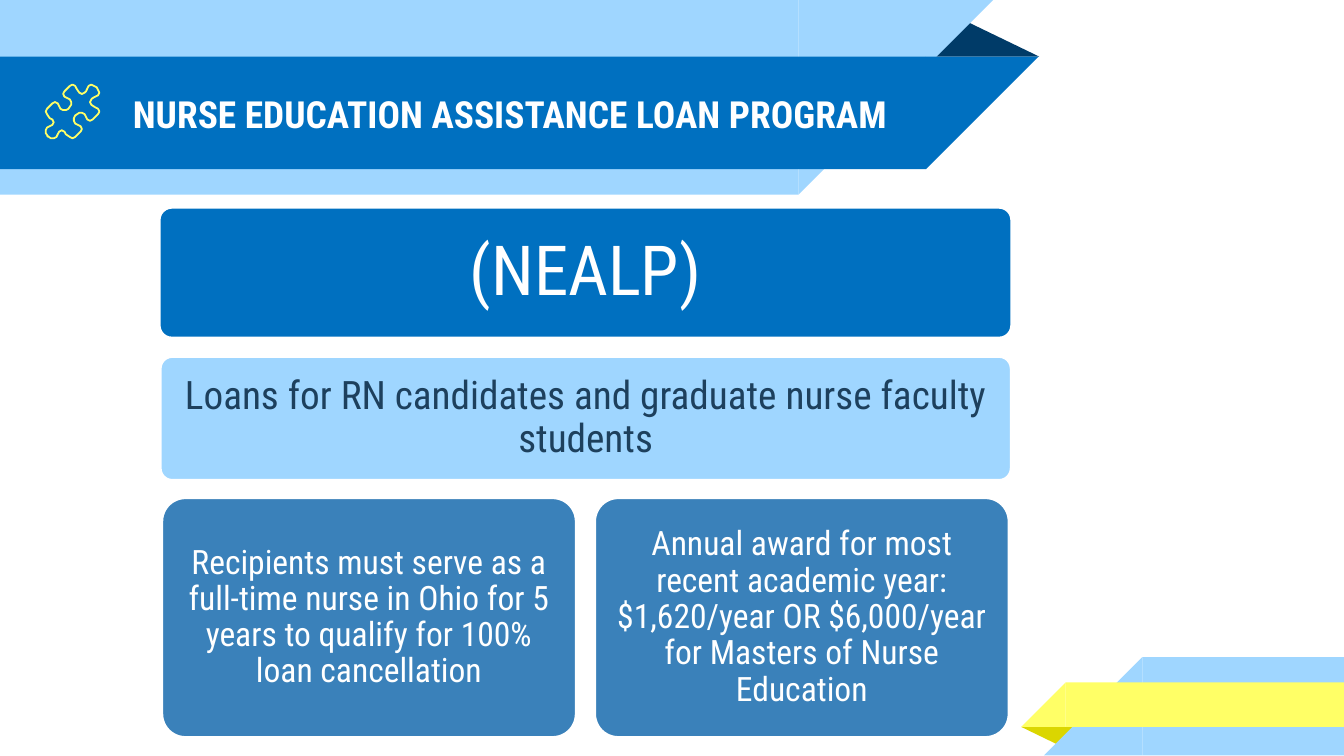
from pptx import Presentation
from pptx.dml.color import RGBColor
from pptx.enum.shapes import MSO_SHAPE as Preset
from pptx.enum.text import MSO_ANCHOR as Anchor, MSO_AUTO_SIZE as AutoSize, PP_ALIGN as Align
from pptx.util import Cm, Pt

FONT = "Roboto Condensed"
WHITE, BLUE, SKY, STEEL = "FFFFFF", "0070C0", "9FD6FF", "3A81BA"
NAVY, INK, YELLOW, OLIVE = "003B68", "1D405D", "FFFF66", "DBD600"
SLIDE_W, SLIDE_H = 25.4, 14.29

# Upper left half of the puzzle piece, in hundredths of an inch
PUZZLE_HALF = [
    (72, 65), (70, 64), (68, 63), (66, 64), (65, 66), (64, 68), (63, 69),
    (61, 70), (59, 69), (57, 66), (56, 64), (54, 63), (52, 64), (50, 66),
    (48, 68), (47, 70), (48, 72), (50, 73), (52, 74), (53, 76), (53, 78),
    (51, 81), (49, 82), (47, 82), (45, 81), (44, 79), (43, 77), (41, 76),
    (39, 77), (37, 79), (35, 81), (34, 83), (35, 85), (37, 88), (39, 89),
    (40, 91), (39, 93), (37, 94), (35, 95), (34, 97), (34, 99), (36, 102),
]
MIRROR_SUM = 137  # the piece is symmetric about the line x + y = 137


def color(hex_code):
    return RGBColor.from_string(hex_code)


def add_block(slide, preset, left, top, width, height, fill, rotation=0):
    block = slide.shapes.add_shape(preset, Cm(left), Cm(top), Cm(width), Cm(height))
    block.shadow.inherit = False
    block.fill.solid()
    block.fill.fore_color.rgb = color(fill)
    block.line.fill.background()
    block.rotation = rotation
    return block


def add_fold(slide, left, top, width, height, fill, rotation=0):
    fold = add_block(slide, Preset.ISOSCELES_TRIANGLE, left, top, width, height, fill, rotation)
    fold.adjustments[0] = 0.32


def add_header_band(slide, top, width, height, fill):
    """Band from the left edge, with a slanted right end."""
    add_block(slide, Preset.RECTANGLE, 0, top, width, height, fill)
    add_block(slide, Preset.RIGHT_TRIANGLE, width, top, height, height, fill, 90)


def add_footer_band(slide, left, top, height, fill):
    """Band to the right edge, with a slanted left end."""
    add_block(slide, Preset.RECTANGLE, left, top, SLIDE_W - left, height, fill)
    add_block(slide, Preset.RIGHT_TRIANGLE, left - height, top, height, height, fill, 270)


def format_text(frame, text, size, text_color, inset, align, bold=False):
    frame.text = text
    frame.word_wrap = True
    frame.auto_size = AutoSize.NONE
    frame.vertical_anchor = Anchor.MIDDLE
    frame.margin_left = frame.margin_right = Cm(inset)
    frame.margin_top = frame.margin_bottom = Cm(inset)
    paragraph = frame.paragraphs[0]
    paragraph.alignment = align
    font = paragraph.runs[0].font
    font.name, font.size, font.bold = FONT, Pt(size), bold
    font.color.rgb = color(text_color)
    return paragraph


def add_card(slide, box, fill, text, size, text_color, inset):
    card = add_block(slide, Preset.ROUNDED_RECTANGLE, *box, fill)
    card.adjustments[0] = 0.1
    card.line.color.rgb = color(WHITE)
    card.line.width = Pt(2)
    paragraph = format_text(card.text_frame, text, size, text_color, inset, Align.CENTER)
    paragraph.line_spacing = 0.9


def add_puzzle_piece(slide):
    mirrored = [(MIRROR_SUM - y, MIRROR_SUM - x) for x, y in reversed(PUZZLE_HALF)]
    start, *rest = PUZZLE_HALF + mirrored
    outline = slide.shapes.build_freeform(*start, scale=Cm(2.54) / 100)
    outline.add_line_segments(rest, close=True)
    piece = outline.convert_to_shape()
    piece.shadow.inherit = False
    piece.fill.background()
    piece.line.color.rgb = color(YELLOW)
    piece.line.width = Pt(0.96)


def add_title(slide, text):
    title = slide.shapes.title
    title.left, title.top, title.width, title.height = Cm(2.26), Cm(1.09), Cm(15.65), Cm(2.13)
    format_text(title.text_frame, text, 20, WHITE, 0.25, Align.LEFT, bold=True)
    # Bring the title in front of the ribbon
    slide.shapes.element.append(title.element)


def main():
    deck = Presentation()
    deck.slide_width, deck.slide_height = Cm(SLIDE_W), Cm(SLIDE_H)
    slide = deck.slides.add_slide(deck.slide_layouts[5])

    # Header ribbon
    add_fold(slide, 17.48, 0.36, 2.16, 0.71, NAVY)
    add_header_band(slide, 0, 15.09, 3.68, SKY)
    add_header_band(slide, 1.07, 17.5, 2.13, BLUE)

    # Footer ribbon
    add_fold(slide, 19.3, 13.74, 1.09, 0.36, OLIVE, 180)
    add_footer_band(slide, 21.59, 12.42, 1.86, SKY)
    add_footer_band(slide, 20.14, 12.9, 0.84, YELLOW)

    # Program, purpose and terms
    add_card(slide, (3, 3.91, 16.13, 2.49), BLUE, "(NEALP)", 37, WHITE, 0.38)
    add_card(slide, (3.02, 6.73, 16.1, 2.36), SKY,
             "Loans for RN candidates and graduate nurse faculty students", 21, INK, 0.23)
    terms = [
        "Recipients must serve as a full-time nurse in Ohio for 5 years "
        "to qualify for 100% loan cancellation",
        "Annual award for most recent academic year: $1,620/year OR $6,000/year "
        "for Masters of Nurse Education",
    ]
    for column, term in enumerate(terms):
        add_card(slide, (3.05 + column * 8.18, 9.4, 7.85, 4.55), STEEL, term, 18, WHITE, 0.18)

    # Title and icon
    add_title(slide, "NURSE EDUCATION ASSISTANCE LOAN PROGRAM")
    add_puzzle_piece(slide)

    deck.save("out.pptx")


if __name__ == "__main__":
    main()
